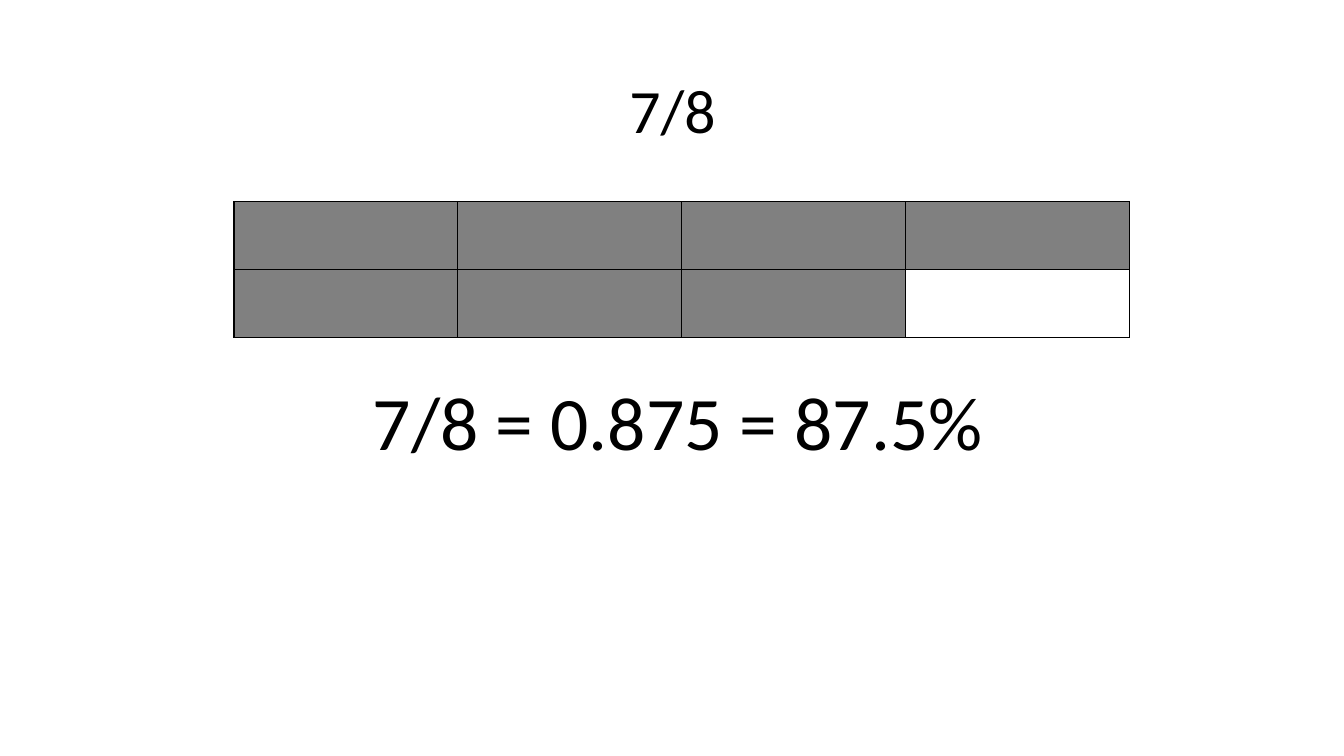
from pptx import Presentation
from pptx.dml.color import RGBColor
from pptx.enum.text import MSO_ANCHOR, PP_ALIGN
from pptx.oxml import parse_xml
from pptx.oxml.ns import nsdecls
from pptx.util import Inches, Pt

CENTER = PP_ALIGN.CENTER
TOP, MIDDLE = MSO_ANCHOR.TOP, MSO_ANCHOR.MIDDLE
BLACK = RGBColor(0x00, 0x00, 0x00)
GREY = RGBColor(0x80, 0x80, 0x80)
WHITE = RGBColor(0xFF, 0xFF, 0xFF)

PAGE_WIDTH, PAGE_HEIGHT = Inches(13.33), Inches(7.5)
ROWS, COLUMNS, SHADED = 2, 4, 7
COLUMN_WIDTH, ROW_HEIGHT = Inches(2.22), Inches(0.675)
BORDER_WIDTH = Pt(1)


def add_text(page, area, text, size, anchor, line_spacing):
    box = page.shapes.add_textbox(*(Inches(length) for length in area))
    frame = box.text_frame
    for name, value in {"word_wrap": True, "vertical_anchor": anchor}.items():
        setattr(frame, name, value)
    para = frame.paragraphs[0]
    for name, value in {"alignment": CENTER, "line_spacing": line_spacing}.items():
        setattr(para, name, value)
    span = para.add_run()
    span.text = text
    for name, value in {"name": "Calibri", "size": Pt(size)}.items():
        setattr(span.font, name, value)
    span.font.color.rgb = BLACK


def add_borders(cell):
    properties = cell._tc.get_or_add_tcPr()
    for position, side in enumerate(("lnL", "lnR", "lnT", "lnB")):
        border = parse_xml(
            f'<a:{side} {nsdecls("a")} w="{BORDER_WIDTH}"><a:solidFill>'
            f'<a:srgbClr val="{BLACK}"/></a:solidFill></a:{side}>'
        )
        properties.insert(position, border)


def add_fraction_grid(page, left, top):
    table = page.shapes.add_table(
        ROWS, COLUMNS, left, top, COLUMNS * COLUMN_WIDTH, ROWS * ROW_HEIGHT
    ).table
    for name in ("first_row", "horz_banding"):
        setattr(table, name, False)
    for index, cell in enumerate(table.iter_cells()):
        cell.fill.solid()
        cell.fill.fore_color.rgb = GREY if index < SHADED else WHITE
        add_borders(cell)


def main():
    deck = Presentation()
    deck.slide_width, deck.slide_height = PAGE_WIDTH, PAGE_HEIGHT
    page = deck.slides.add_slide(deck.slide_layouts[6])
    add_text(page, (0.92, 0.4, 11.5, 1.45), "7/8", 44, MIDDLE, 0.9)
    add_fraction_grid(page, Inches(2.32), Inches(2))
    add_text(page, (1.61, 3.67, 10.23, 1.01), "7/8 = 0.875 = 87.5%", 54, TOP, 1.0)
    deck.save("out.pptx")


if __name__ == "__main__":
    main()
